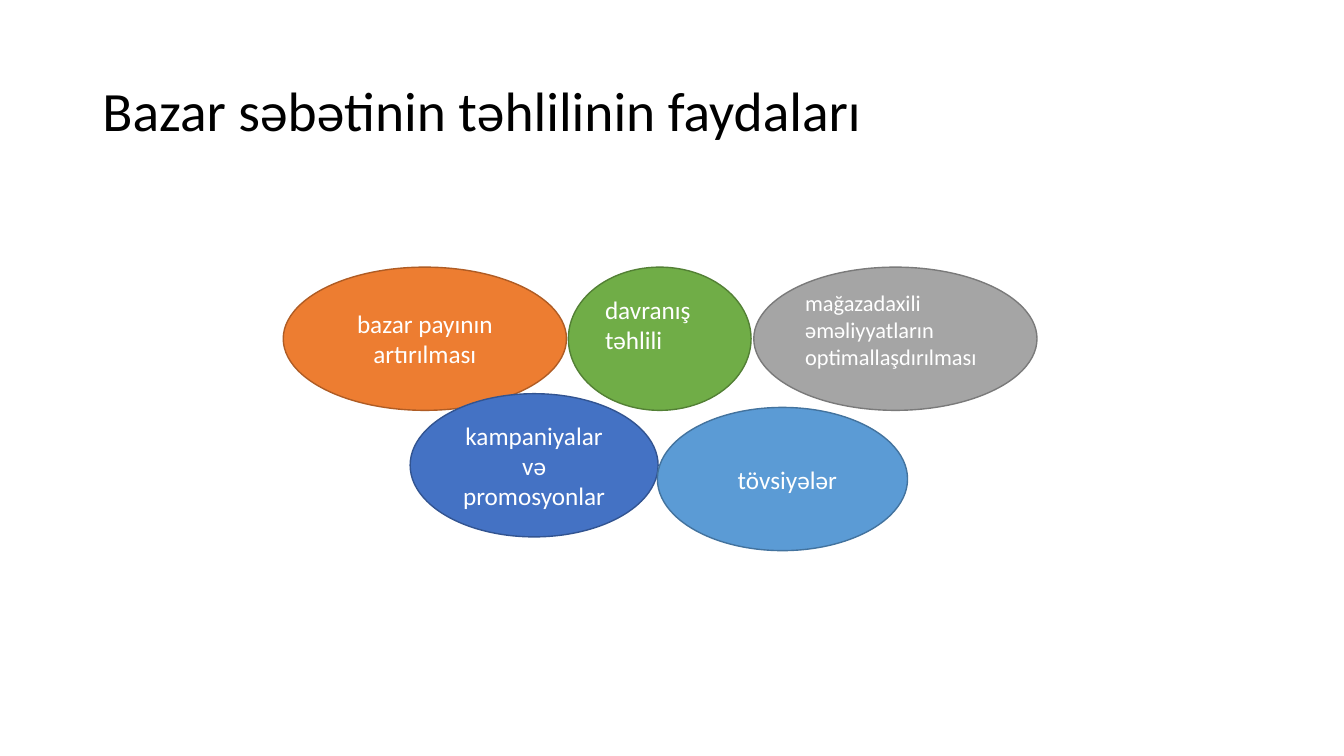
"""Build the slide on the benefits of market basket analysis."""
from dataclasses import dataclass

from pptx import Presentation
from pptx import util as u
from pptx.dml.color import RGBColor
from pptx.enum import shapes, text

BLACK = RGBColor(0x00, 0x00, 0x00)
WHITE = RGBColor(0xFF, 0xFF, 0xFF)
ORANGE = RGBColor(0xED, 0x7D, 0x31)
DARK_ORANGE = RGBColor(0xAF, 0x5C, 0x24)
BLUE = RGBColor(0x44, 0x72, 0xC4)
DARK_BLUE = RGBColor(0x32, 0x54, 0x91)
SKY = RGBColor(0x5B, 0x9B, 0xD5)
DARK_SKY = RGBColor(0x43, 0x73, 0x9E)
GREEN = RGBColor(0x70, 0xAD, 0x47)
DARK_GREEN = RGBColor(0x53, 0x80, 0x35)
GREY = RGBColor(0xA5, 0xA5, 0xA5)
DARK_GREY = RGBColor(0x7A, 0x7A, 0x7A)

FONT = "Calibri"
BENEFIT_HEIGHT = 102.3
UPPER_ROW = 190.8
SIDE_INSET = 7.2


@dataclass(frozen=True)
class Benefit:
    label: str
    left: float
    top: float
    width: float
    fill: RGBColor
    outline: RGBColor
    align: text.PP_ALIGN = text.PP_ALIGN.CENTER
    size: float = 18
    indent: float = 0
    lift: float = 0


BENEFITS = [
    Benefit("bazar payının artırılması", 202.3, UPPER_ROW, 202.3, ORANGE, DARK_ORANGE),
    Benefit("kampaniyalar və promosyonlar", 293, 281.2, 177.1, BLUE, DARK_BLUE),
    Benefit("tövsiyələr", 469.6, 291, 178.7, SKY, DARK_SKY,
            align=text.PP_ALIGN.LEFT, indent=24),
    Benefit("davranış təhlili", 406, UPPER_ROW, 130.5, GREEN, DARK_GREEN,
            align=text.PP_ALIGN.JUSTIFY, lift=10),
    Benefit("mağazadaxili əməliyyatların optimallaşdırılması", 538.4, UPPER_ROW, 202.3,
            GREY, DARK_GREY, align=text.PP_ALIGN.LEFT, size=16, lift=6.5),
]


def write(frame, wording: str, *, size: float, color: RGBColor,
          align: text.PP_ALIGN = text.PP_ALIGN.LEFT, spacing: float = 1.0) -> None:
    frame.word_wrap = True
    frame.auto_size = text.MSO_AUTO_SIZE.NONE
    frame.vertical_anchor = text.MSO_ANCHOR.MIDDLE
    paragraph = frame.paragraphs[0]
    paragraph.alignment = align
    paragraph.line_spacing = spacing
    run = paragraph.add_run()
    run.text = wording
    run.font.name = FONT
    run.font.size = u.Pt(size)
    run.font.color.rgb = color


def draw_benefit(slide, benefit: Benefit) -> None:
    oval = slide.shapes.add_shape(
        shapes.MSO_SHAPE.OVAL, u.Pt(benefit.left), u.Pt(benefit.top),
        u.Pt(benefit.width), u.Pt(BENEFIT_HEIGHT))
    oval.shadow.inherit = False
    oval.fill.solid()
    oval.fill.fore_color.rgb = benefit.fill
    oval.line.color.rgb = benefit.outline
    oval.line.width = u.Pt(1)
    frame = oval.text_frame
    frame.margin_left = u.Pt(SIDE_INSET + benefit.indent)
    frame.margin_right = u.Pt(SIDE_INSET)
    frame.margin_top = u.Pt(0)
    frame.margin_bottom = u.Pt(2 * benefit.lift)
    write(frame, benefit.label, size=benefit.size, color=WHITE, align=benefit.align)


def main() -> None:
    deck = Presentation()
    deck.slide_width, deck.slide_height = u.Pt(960), u.Pt(540)
    slide = deck.slides.add_slide(deck.slide_layouts[5])
    heading = slide.shapes.title
    heading.left, heading.top = u.Pt(66), u.Pt(28.8)
    heading.width, heading.height = u.Pt(828), u.Pt(104.4)
    write(heading.text_frame, "Bazar səbətinin təhlilinin faydaları",
          size=39.6, color=BLACK, spacing=0.9)
    for benefit in BENEFITS:
        draw_benefit(slide, benefit)
    deck.save("out.pptx")


if __name__ == "__main__":
    main()
